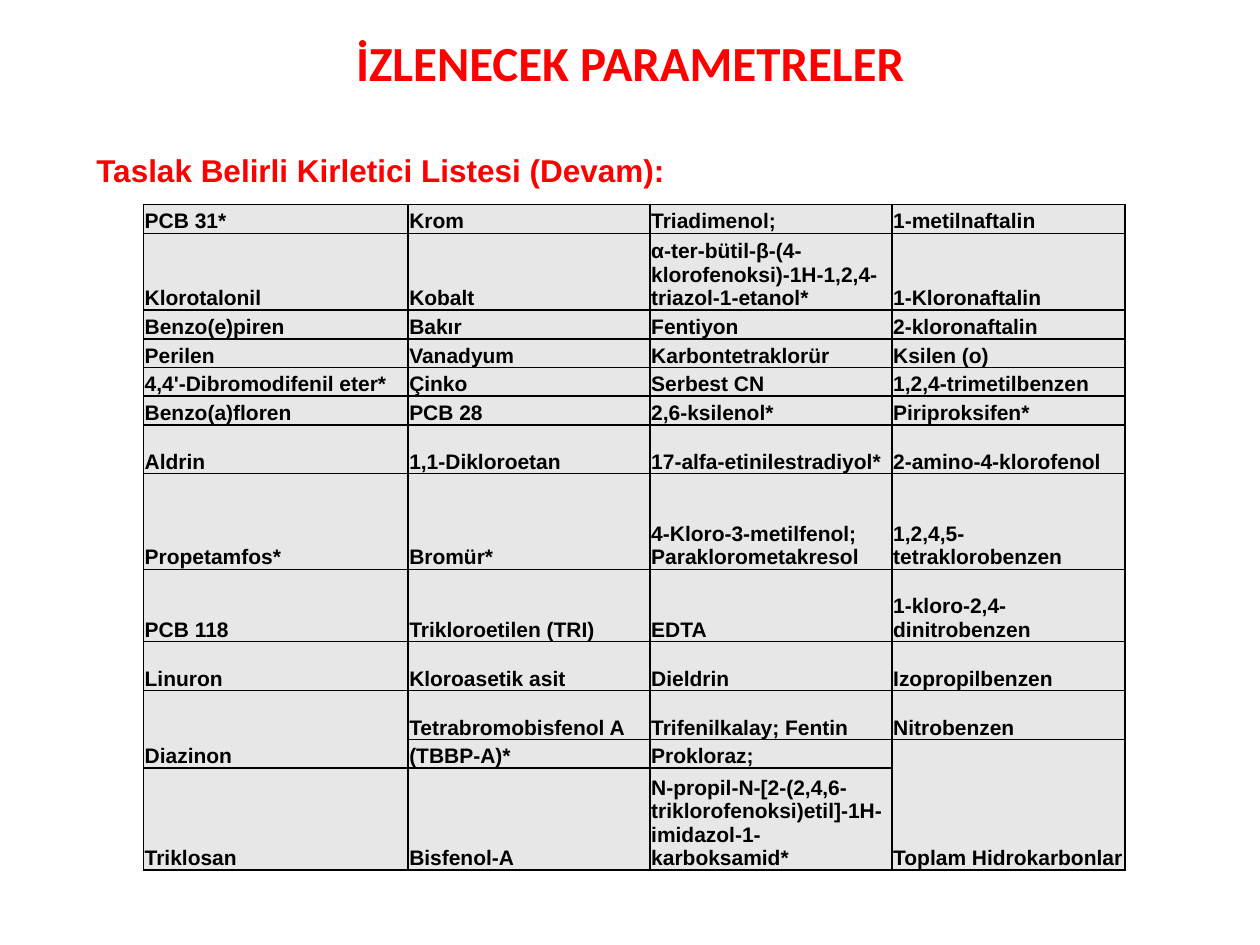
from pptx import Presentation
from pptx.dml.color import RGBColor
from pptx.enum.text import MSO_ANCHOR, MSO_AUTO_SIZE, PP_ALIGN
from pptx.oxml.ns import qn
from pptx.util import Pt
from lxml.etree import SubElement

RED = RGBColor(0xFF, 0x00, 0x00)
BLACK = RGBColor(0x00, 0x00, 0x00)
GREY = RGBColor(0xE7, 0xE7, 0xE7)

COLUMN_WIDTHS = [151.2, 138.3, 138.3, 133.2]

# Row height, then the four cells; None continues the cell above
POLLUTANTS = [
    (16.4, "PCB 31*", "Krom", "Triadimenol;", "1-metilnaftalin"),
    (41, "Klorotalonil", "Kobalt",
     "α-ter-bütil-β-(4-klorofenoksi)-1H-1,2,4-triazol-1-etanol*", "1-Kloronaftalin"),
    (16.4, "Benzo(e)piren", "Bakır", "Fentiyon", "2-kloronaftalin"),
    (16.4, "Perilen", "Vanadyum", "Karbontetraklorür", "Ksilen (o)"),
    (16.4, "4,4'-Dibromodifenil eter*", "Çinko", "Serbest CN", "1,2,4-trimetilbenzen"),
    (16.4, "Benzo(a)floren", "PCB 28", "2,6-ksilenol*", "Piriproksifen*"),
    (28, "Aldrin", "1,1-Dikloroetan", "17-alfa-etinilestradiyol*", "2-amino-4-klorofenol"),
    (54.6, "Propetamfos*", "Bromür*",
     "4-Kloro-3-metilfenol; Paraklorometakresol", "1,2,4,5-tetraklorobenzen"),
    (41.3, "PCB 118", "Trikloroetilen (TRI)", "EDTA", "1-kloro-2,4-dinitrobenzen"),
    (28, "Linuron", "Kloroasetik asit", "Dieldrin", "Izopropilbenzen"),
    (28, "Diazinon", "Tetrabromobisfenol A", "Trifenilkalay; Fentin", "Nitrobenzen"),
    (16.4, None, "(TBBP-A)*", "Prokloraz;", "Toplam Hidrokarbonlar"),
    (54.6, "Triklosan", "Bisfenol-A",
     "N-propil-N-[2-(2,4,6-triklorofenoksi)etil]-1H-imidazol-1-karboksamid*", None),
]


def add_bold_run(paragraph, text, font_name, size, color):
    run = paragraph.add_run()
    run.text = text
    run.font.name = font_name
    run.font.size = Pt(size)
    run.font.bold = True
    run.font.color.rgb = color


def add_heading(slide, left, top, width, height, text, font_name, size, alignment):
    heading = slide.shapes.add_textbox(Pt(left), Pt(top), Pt(width), Pt(height))
    frame = heading.text_frame
    frame.word_wrap = True
    frame.auto_size = MSO_AUTO_SIZE.SHAPE_TO_FIT_TEXT
    paragraph = frame.paragraphs[0]
    paragraph.alignment = alignment
    add_bold_run(paragraph, text, font_name, size, RED)


def style_cell(cell):
    cell.vertical_anchor = MSO_ANCHOR.BOTTOM
    cell.margin_left = cell.margin_right = cell.margin_top = Pt(0.7)
    cell.margin_bottom = Pt(0)
    # Thin black border on every side
    properties = cell._tc.get_or_add_tcPr()
    for side in ("a:lnL", "a:lnR", "a:lnT", "a:lnB"):
        border = SubElement(properties, qn(side), w=str(Pt(1)))
        border_fill = SubElement(border, qn("a:solidFill"))
        SubElement(border_fill, qn("a:srgbClr"), val=str(BLACK))
    cell.fill.solid()
    cell.fill.fore_color.rgb = GREY


def add_pollutant_table(slide, left, top):
    heights = [height for height, *_ in POLLUTANTS]
    table = slide.shapes.add_table(
        len(POLLUTANTS), len(COLUMN_WIDTHS), Pt(left), Pt(top),
        Pt(sum(COLUMN_WIDTHS)), Pt(sum(heights))).table
    table.first_row = False
    table.horz_banding = False
    for column, width in zip(table.columns, COLUMN_WIDTHS):
        column.width = Pt(width)
    for row_index, (height, *names) in enumerate(POLLUTANTS):
        table.rows[row_index].height = Pt(height)
        for column_index, name in enumerate(names):
            cell = table.cell(row_index, column_index)
            style_cell(cell)
            if name is None:
                table.cell(row_index - 1, column_index).merge(cell)
            else:
                add_bold_run(cell.text_frame.paragraphs[0], name, "Arial", 12, BLACK)


def main():
    presentation = Presentation()
    presentation.slide_width = Pt(720)
    presentation.slide_height = Pt(540)
    slide = presentation.slides.add_slide(presentation.slide_layouts[6])

    # Title and list heading
    add_heading(slide, 99, 15, 522, 41, "İZLENECEK PARAMETRELER",
                "Calibri", 28, PP_ALIGN.CENTER)
    add_heading(slide, 48, 83, 414, 29, "Taslak Belirli Kirletici Listesi (Devam):",
                "Arial", 18, PP_ALIGN.JUSTIFY)

    # Pollutant list
    add_pollutant_table(slide, 82, 116.9)

    presentation.save("out.pptx")


if __name__ == "__main__":
    main()
